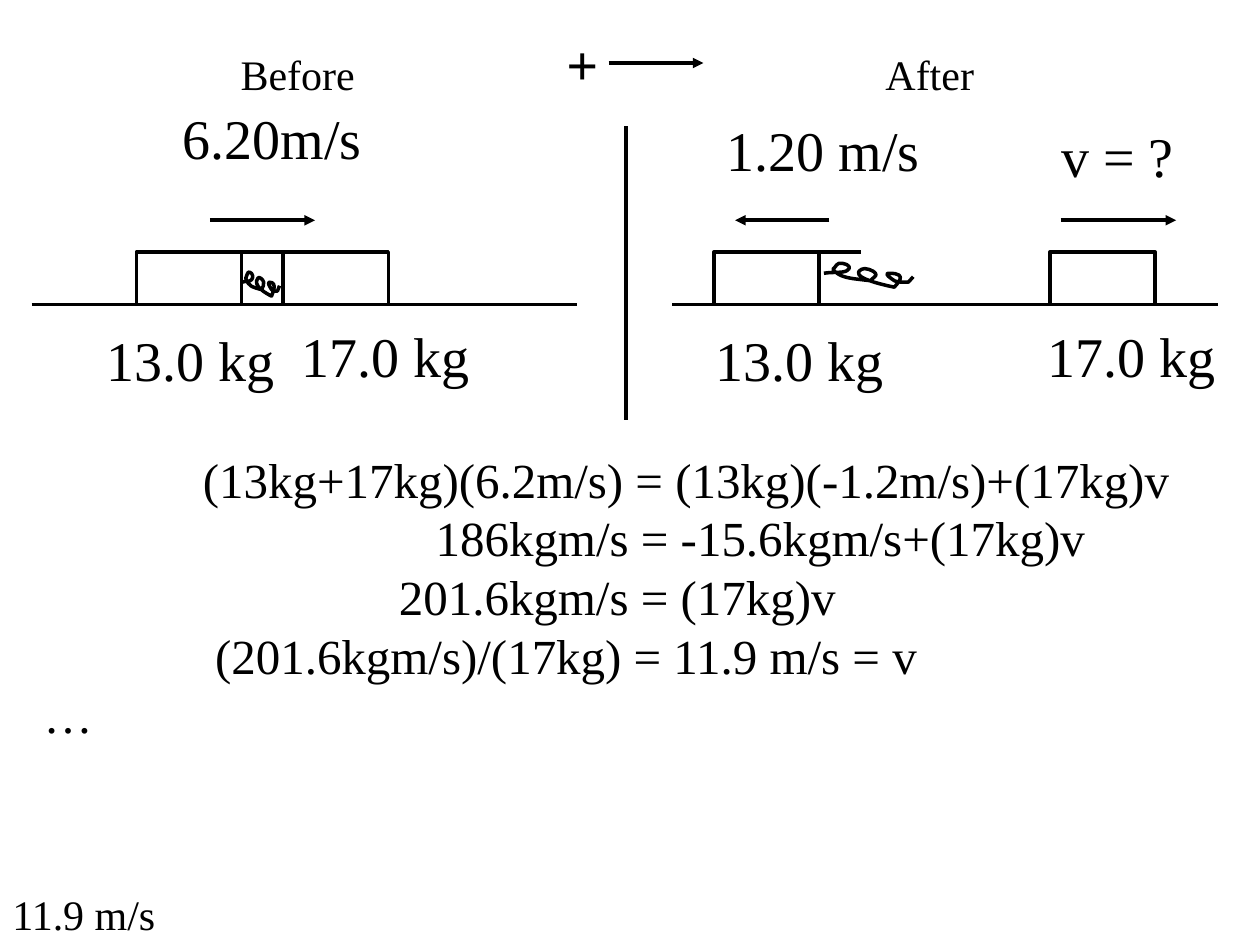
import pptx
import pptx.dml.color
import pptx.enum.shapes
import pptx.enum.text
import pptx.oxml
import pptx.oxml.ns
import pptx.util
from pptx.util import Cm

BLACK = "000000"
FONT = "Times New Roman"
GROUND_Y = 6.14
BLOCK_TOP = 5.08
BLOCK_WIDTH = 2.12
ARROW_Y = 4.44
SPACE_WIDTH = 0.247

SPRING = [
    (0, 0.23),
    (0.15, 0.20), (0.36, 0.23), (0.46, 0.18),
    (0.56, 0.13), (0.51, 0.05), (0.38, 0.03),
    (0.25, 0), (0.25, 0.10), (0.18, 0.15),
    (0.33, 0.33), (0.53, 0.33), (0.94, 0.38),
    (0.97, 0.33), (1.09, 0.28), (1.04, 0.23),
    (1.02, 0.18), (0.81, 0.10), (0.76, 0.15),
    (0.48, 0.30), (1.17, 0.46), (1.42, 0.51),
    (1.45, 0.46), (1.73, 0.23), (1.32, 0.23),
    (1.19, 0.23), (1.35, 0.33), (1.42, 0.38),
    (1.47, 0.41), (1.60, 0.41), (1.70, 0.41),
    (1.73, 0.38), (1.80, 0.30), (1.80, 0.30),
]

LABELS = [
    ("Before", 4.60, 0.85, 2.82, 24),
    ("After", 17.60, 0.85, 2.29, 24),
    ("6.20m/s", 3.43, 1.96, 4.15, 32),
    ("1.20 m/s", 14.40, 2.21, 4.45, 32),
    ("v = ?", 21.14, 2.33, 2.77, 32),
    ("13.0 kg", 1.90, 6.43, 3.89, 32),
    ("17.0 kg", 5.83, 6.35, 3.89, 32),
    ("13.0 kg", 14.17, 6.43, 3.89, 32),
    ("17.0 kg", 20.87, 6.35, 3.89, 32),
    ("11.9 m/s", 0, 17.78, 3.43, 24),
]

EQUATIONS = [
    (13, "(13kg+17kg)(6.2m/s) = (13kg)(-1.2m/s)+(17kg)v"),
    (32, "186kgm/s = -15.6kgm/s+(17kg)v"),
    (29, "201.6kgm/s = (17kg)v"),
    (14, "(201.6kgm/s)/(17kg) = 11.9 m/s = v"),
    (0, "…"),
]


def color(value):
    return pptx.dml.color.RGBColor.from_string(value)


def drawing_element(tag):
    return pptx.oxml.parse_xml(f'<a:{tag} {pptx.oxml.ns.nsdecls("a")}/>')


def style_outline(sp):
    sp.line.color.rgb = color(BLACK)
    sp.line.width = pptx.util.Pt(2)


def format_runs(p, size, bold=False):
    for r in p.runs:
        r.font.name = FONT
        r.font.size = pptx.util.Pt(size)
        r.font.bold = bold
        r.font.color.rgb = color(BLACK)


def add_line(shapes, x1, y1, x2, y2, arrow=False):
    sp = shapes.add_connector(
        pptx.enum.shapes.MSO_CONNECTOR.STRAIGHT, Cm(x1), Cm(y1), Cm(x2), Cm(y2)
    )
    style_outline(sp)
    if arrow:
        tail = drawing_element("tailEnd")
        tail.set("type", "triangle")
        sp.line._get_or_add_ln().append(tail)
    sp._element.spPr.append(drawing_element("effectLst"))


def add_label(shapes, text, x, y, width, size, bold=False):
    height = 1.27 if size == 24 else 1.6
    sp = shapes.add_textbox(Cm(x), Cm(y), Cm(width), Cm(height))
    tf = sp.text_frame
    tf.word_wrap = False
    tf.auto_size = pptx.enum.text.MSO_AUTO_SIZE.SHAPE_TO_FIT_TEXT
    tf.text = text
    format_runs(tf.paragraphs[0], size, bold)


def add_block(shapes, x):
    sp = shapes.add_shape(
        pptx.enum.shapes.MSO_SHAPE.RECTANGLE,
        Cm(x), Cm(BLOCK_TOP), Cm(BLOCK_WIDTH), Cm(GROUND_Y - BLOCK_TOP),
    )
    sp.shadow.inherit = False
    sp.fill.background()
    style_outline(sp)


def make_curved(sp):
    segments = sp._element.xpath(".//a:lnTo")
    for i in range(0, len(segments), 3):
        curve = drawing_element("cubicBezTo")
        segments[i].addprevious(curve)
        for segment in segments[i:i + 3]:
            curve.append(segment[0])
            segment.getparent().remove(segment)


def add_spring(shapes, x, y, stretch):
    points = [(Cm(x + dx * stretch), Cm(y + dy)) for dx, dy in SPRING]
    builder = shapes.build_freeform(*points[0])
    builder.add_line_segments(points[1:], close=False)
    sp = builder.convert_to_shape()
    make_curved(sp)
    sp.shadow.inherit = False
    sp.fill.background()
    style_outline(sp)


def add_equations(shapes):
    sp = shapes.add_textbox(Cm(0.63), Cm(8.93), Cm(24.13), Cm(6.2))
    tf = sp.text_frame
    tf.word_wrap = True
    tf.auto_size = pptx.enum.text.MSO_AUTO_SIZE.SHAPE_TO_FIT_TEXT
    for i, (indent, text) in enumerate(EQUATIONS):
        p = tf.add_paragraph() if i else tf.paragraphs[0]
        p.text = text
        p._p.get_or_add_pPr().set("marL", str(Cm(indent * SPACE_WIDTH)))
        format_runs(p, 28)


def main():
    prs = pptx.Presentation()
    prs.slide_width, prs.slide_height = Cm(25.4), Cm(19.05)
    s = prs.slides.add_slide(prs.slide_layouts[6])
    shapes = s.shapes

    add_line(shapes, 12.62, 2.54, 12.62, 8.46)
    for x in (0.64, 13.55):
        add_line(shapes, x, GROUND_Y, x + 11, GROUND_Y)
    for x in (2.75, 5.71, 14.39, 21.17):
        add_block(shapes, x)
    for x in (4.87, 16.51):
        add_line(shapes, x, BLOCK_TOP, x + 0.85, BLOCK_TOP)
    add_spring(shapes, 4.88, 5.46, 0.42)
    add_spring(shapes, 16.61, 5.28, 1)
    for start, end in ((4.23, 6.35), (16.72, 14.82), (21.38, 23.71)):
        add_line(shapes, start, ARROW_Y, end, ARROW_Y, arrow=True)

    direction = shapes.add_group_shape().shapes
    add_line(direction, 12.27, 1.27, 14.18, 1.27, arrow=True)
    add_label(direction, "+", 11.17, 0.48, 1.14, 32, bold=True)

    for label in LABELS:
        add_label(shapes, *label)
    add_equations(shapes)
    prs.save("out.pptx")


if __name__ == "__main__":
    main()
